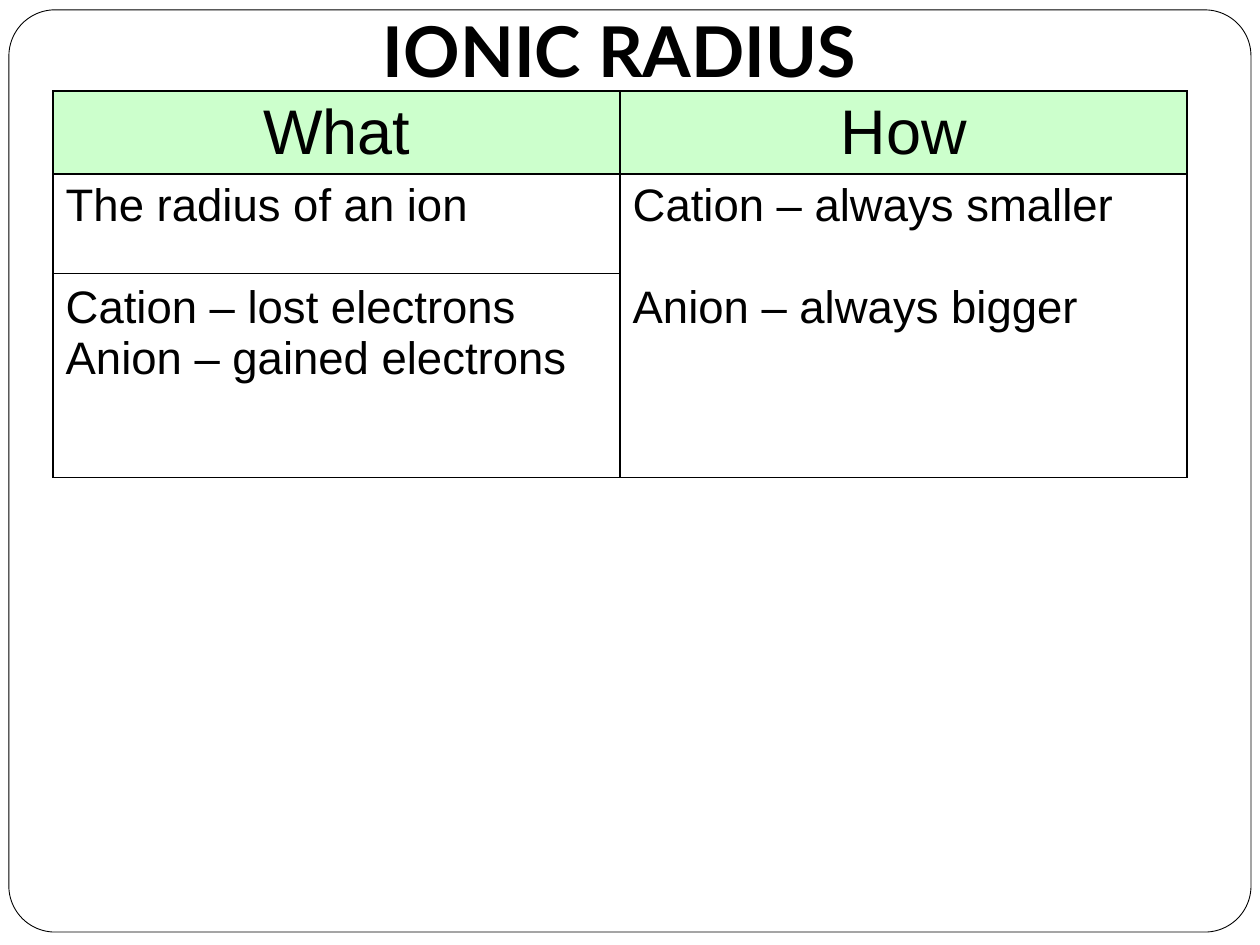
"""Build the ionic radius slide: a framed title above a two-column table."""
from lxml.etree import SubElement
from pptx import Presentation
from pptx.dml.color import RGBColor
from pptx.enum.shapes import MSO_CONNECTOR as Connector, MSO_SHAPE as Shape
from pptx.enum.text import MSO_ANCHOR as Anchor, MSO_AUTO_SIZE as AutoSize, PP_ALIGN as Align
from pptx.oxml.ns import qn
from pptx.util import Cm, Pt

BLACK, WHITE, GREEN = "000000", "FFFFFF", "CCFFCC"


def color(hex_string):
    return RGBColor.from_string(hex_string)


def add_text(paragraph, words, size, font, align):
    paragraph.alignment = align
    run = paragraph.add_run()
    run.text = words
    run.font.size = Pt(size)
    run.font.name = font
    run.font.bold = False
    run.font.color.rgb = color(BLACK)
    return run


deck = Presentation()
deck.slide_width, deck.slide_height = Cm(25.4), Cm(19.05)
slide = deck.slides.add_slide(deck.slide_layouts[5])

heading = slide.shapes.title
heading.left, heading.top, heading.width, heading.height = Cm(0.84), Cm(0.25), Cm(23.29), Cm(1.85)
heading_frame = heading.text_frame
heading_frame.auto_size = AutoSize.NONE
heading_frame.vertical_anchor = Anchor.BOTTOM
heading_frame.margin_left = heading_frame.margin_right = heading_frame.margin_bottom = Cm(0.25)
heading_frame.margin_top = Cm(0.13)
heading_run = add_text(heading_frame.paragraphs[0], "IONIC RADIUS", 40, "Lato", Align.CENTER)
heading_run.font.bold = True
heading_run.font.underline = True

border = slide.shapes.add_shape(Shape.ROUNDED_RECTANGLE, Cm(0.18), Cm(0.2), Cm(25.04), Cm(18.59))
border.adjustments[0] = 0.05
border.shadow.inherit = False
border.fill.solid()
border.fill.fore_color.rgb = color(WHITE)
border.line.color.rgb = color(BLACK)
border.line.width = Pt(0.5)
heading._element.addprevious(border._element)

columns = [
    ("What", [("The radius of an ion", 0), ("Cation – lost electrons", 29), ("Anion – gained electrons", 0)]),
    ("How", [("Cation – always smaller", 0), ("Anion – always bigger", 29)]),
]
left, column_width = Cm(1.07), Cm(11.43)
grid = slide.shapes.add_table(2, 2, left, Cm(1.83), 2 * column_width, Cm(7.8)).table
grid.rows[0].height, grid.rows[1].height = Cm(1.68), Cm(6.12)

for index, (label, facts) in enumerate(columns):
    grid.columns[index].width = column_width
    header, body = grid.cell(0, index), grid.cell(1, index)
    add_text(header.text_frame.paragraphs[0], label, 36, "Arial", Align.CENTER)
    for row, (fact, gap) in enumerate(facts):
        paragraph = body.text_frame.add_paragraph() if row else body.text_frame.paragraphs[0]
        paragraph.space_before = Pt(gap)
        add_text(paragraph, fact, 26, "Arial", Align.LEFT)
    for cell, shade in ((header, GREEN), (body, WHITE)):
        properties = cell._tc.get_or_add_tcPr()
        for side in ("a:lnL", "a:lnR", "a:lnT", "a:lnB"):
            edge = SubElement(properties, qn(side), w=str(Pt(1)))
            edge_fill = SubElement(edge, qn("a:solidFill"))
            SubElement(edge_fill, qn("a:srgbClr"), val=BLACK)
        cell.fill.solid()
        cell.fill.fore_color.rgb = color(shade)

divider = slide.shapes.add_connector(Connector.STRAIGHT, left, Cm(5.51), left + column_width, Cm(5.51))
divider.line.color.rgb = color(BLACK)
divider.line.width = Pt(0.75)
SubElement(divider._element.spPr, qn("a:effectLst"))

deck.save("out.pptx")
